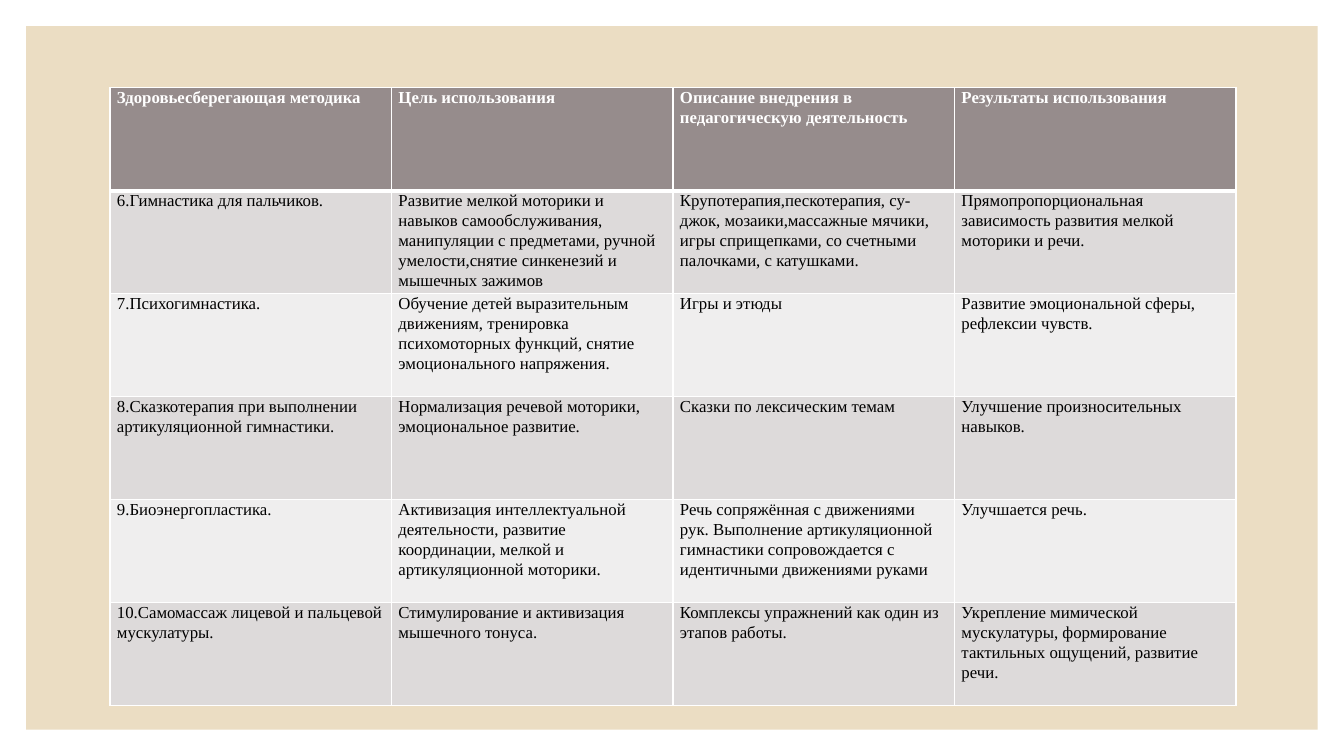
from lxml import etree
from pptx import Presentation
from pptx import util as u
from pptx.dml.color import RGBColor
from pptx.enum import shapes
from pptx.oxml.ns import qn

hues = {"sand": "EBDDC3", "head": "968C8C", "odd": "DDDADA",
        "even": "EFEEEE", "white": "FFFFFF", "black": "000000"}
rows = [
    ["Здоровьесберегающая методика", "Цель использования",
     "Описание внедрения в педагогическую деятельность", "Результаты использования"],
    ["6.Гимнастика для пальчиков.",
     "Развитие мелкой моторики и навыков самообслуживания, манипуляции с предметами, "
     "ручной умелости,снятие синкенезий и мышечных зажимов",
     "Крупотерапия,пескотерапия, су-джок, мозаики,массажные мячики, игры сприщепками, "
     "со счетными палочками, с катушками.",
     "Прямопропорциональная зависимость развития мелкой моторики и речи."],
    ["7.Психогимнастика.",
     "Обучение детей выразительным движениям, тренировка психомоторных функций, "
     "снятие эмоционального напряжения.",
     "Игры и этюды", "Развитие эмоциональной сферы, рефлексии чувств."],
    ["8.Сказкотерапия при выполнении артикуляционной гимнастики.",
     "Нормализация речевой моторики, эмоциональное развитие.",
     "Сказки по лексическим темам", "Улучшение произносительных навыков."],
    ["9.Биоэнергопластика.",
     "Активизация интеллектуальной деятельности, развитие координации, "
     "мелкой и артикуляционной моторики.",
     "Речь сопряжённая с движениями рук. Выполнение артикуляционной гимнастики "
     "сопровождается с идентичными движениями руками",
     "Улучшается речь."],
    ["10.Самомассаж лицевой и пальцевой мускулатуры.",
     "Стимулирование и активизация мышечного тонуса.",
     "Комплексы упражнений как один из этапов работы.",
     "Укрепление мимической мускулатуры, формирование тактильных ощущений, развитие речи."],
]


def paint(item, hue):
    item.fill.solid()
    item.fill.fore_color.rgb = RGBColor.from_string(hues[hue])


def edge(cell, sides):
    props = cell._tc.get_or_add_tcPr()
    for spot, (side, width) in enumerate(sides.items()):
        line = etree.Element(qn(f"a:ln{side}"), w=str(u.Pt(width)))
        fill = etree.SubElement(line, qn("a:solidFill"))
        etree.SubElement(fill, qn("a:srgbClr"), val=hues["white"])
        props.insert(spot, line)


deck = Presentation()
deck.slide_width, deck.slide_height = u.Inches(13.33), u.Inches(7.5)
slide = deck.slides.add_slide(deck.slide_layouts[6])

gap = u.Inches(0.26)
panel = slide.shapes.add_shape(shapes.MSO_SHAPE.RECTANGLE, gap, gap,
                               deck.slide_width - 2 * gap, deck.slide_height - 2 * gap)
panel.shadow.inherit = False
panel.line.fill.background()
paint(panel, "sand")

frame = slide.shapes.add_table(len(rows), len(rows[0]), u.Inches(1.09), u.Inches(0.87),
                               u.Inches(11.17), u.Inches(6.13))
pads = {"margin_left": u.Inches(0.07), "margin_right": u.Inches(0.07),
        "margin_top": 0, "margin_bottom": 0}
for r, row in enumerate(rows):
    for c, words in enumerate(row):
        cell = frame.table.cell(r, c)
        cell.text = words
        for name, value in pads.items():
            setattr(cell, name, value)
        paint(cell, "head" if r == 0 else "odd" if r % 2 else "even")
        edge(cell, {"L": 1, "R": 1, "T": 3 if r == 1 else 1, "B": 3 if r == 0 else 1})
        para = cell.text_frame.paragraphs[0]
        para.line_spacing = 1.07
        font = para.runs[0].font
        for name, value in {"name": "Times New Roman", "size": u.Pt(12), "bold": r == 0}.items():
            setattr(font, name, value)
        font.color.rgb = RGBColor.from_string(hues["black" if r else "white"])

deck.save("out.pptx")
